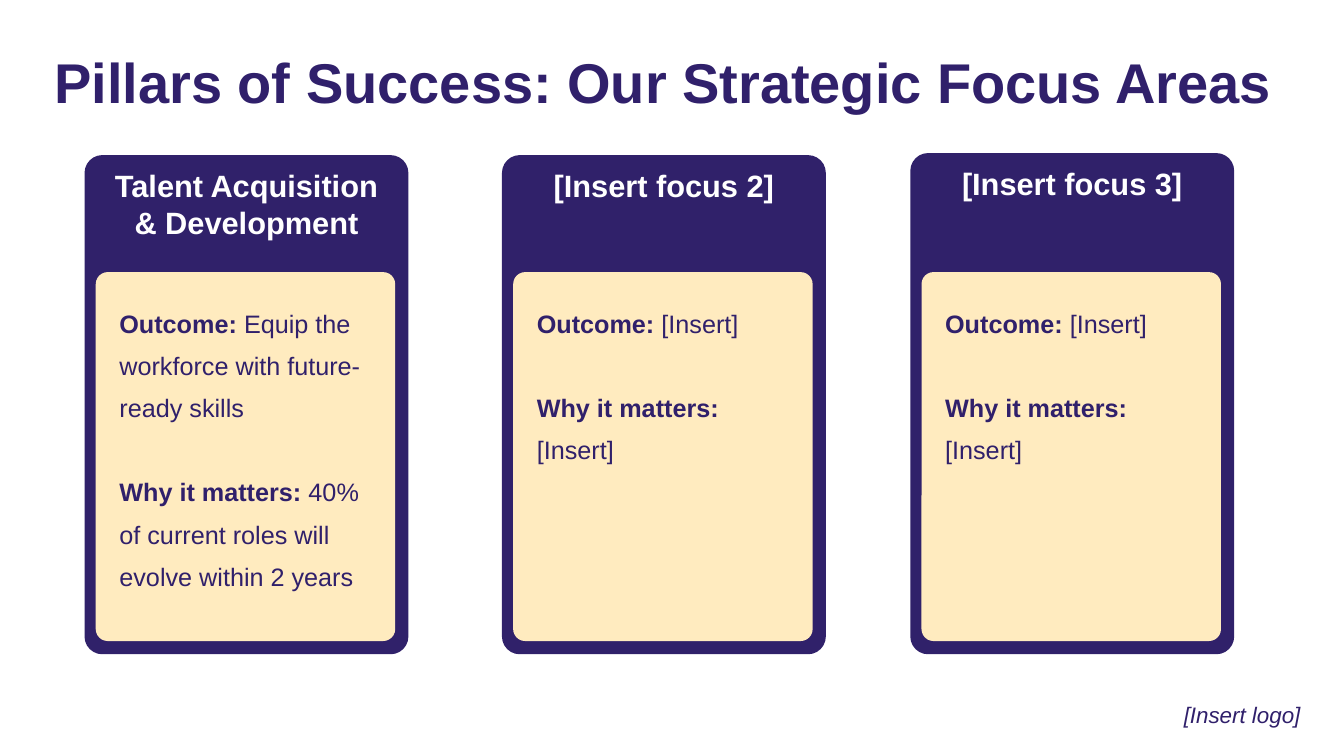
import pptx
import pptx.util
import pptx.dml.color
import pptx.enum.shapes
import pptx.enum.text

Inches = pptx.util.Inches
Pt = pptx.util.Pt
RGBColor = pptx.dml.color.RGBColor
PP_ALIGN = pptx.enum.text.PP_ALIGN
MSO_ANCHOR = pptx.enum.text.MSO_ANCHOR

INK = RGBColor(0x30, 0x20, 0x6B)
PILLAR = RGBColor(0x30, 0x21, 0x6A)
CREAM = RGBColor(0xFF, 0xEB, 0xBF)
WHITE = RGBColor(0xFF, 0xFF, 0xFF)

# Left, top, focus area, outcome, why it matters
PILLARS = [
    (0.86, 1.56, "Talent Acquisition & Development",
     "Equip the workforce with future-ready skills",
     "40% of current roles will evolve within 2 years"),
    (5, 1.56, "[Insert focus 2]", "[Insert]", "[Insert]"),
    (9.05, 1.54, "[Insert focus 3]", "[Insert]", "[Insert]"),
]
PILLAR_WIDTH = 3.17
PILLAR_BOTTOM = 6.47
PANEL_INDENT = 0.09


def style_font(paragraph, size, color, bold=None, italic=None):
    font = paragraph.font
    font.name = "Arial"
    font.size = Pt(size)
    font.color.rgb = color
    font.bold = bold
    font.italic = italic


def set_frame(frame, anchor, left, top, right, bottom):
    """Wrap the text and set its anchor and its insets in inches."""
    frame.word_wrap = True
    frame.vertical_anchor = anchor
    frame.margin_left = Inches(left)
    frame.margin_top = Inches(top)
    frame.margin_right = Inches(right)
    frame.margin_bottom = Inches(bottom)


def add_label(slide, box, text, size, anchor, insets=(0, 0, 0, 0),
              align=PP_ALIGN.LEFT, bold=None, italic=None):
    label = slide.shapes.add_textbox(*map(Inches, box))
    set_frame(label.text_frame, anchor, *insets)
    paragraph = label.text_frame.paragraphs[0]
    paragraph.text = text
    paragraph.alignment = align
    paragraph.line_spacing = 0.9
    style_font(paragraph, size, INK, bold, italic)


def add_rounded(slide, box, rounding, color):
    rounded = slide.shapes.add_shape(
        pptx.enum.shapes.MSO_SHAPE.ROUNDED_RECTANGLE, *map(Inches, box))
    rounded.adjustments[0] = rounding
    rounded.shadow.inherit = False
    rounded.fill.solid()
    rounded.fill.fore_color.rgb = color
    return rounded


def add_header_card(slide, left, top, focus):
    card = add_rounded(
        slide, (left, top, PILLAR_WIDTH, PILLAR_BOTTOM - top), 0.049, PILLAR)
    card.line.color.rgb = PILLAR
    card.line.width = Pt(3)
    set_frame(card.text_frame, MSO_ANCHOR.TOP, 0.1, 0.05, 0.1, 0.05)
    heading = card.text_frame.paragraphs[0]
    heading.text = focus
    heading.alignment = PP_ALIGN.CENTER
    style_font(heading, 22, WHITE, bold=True)


def add_detail_panel(slide, left, outcome, reason):
    panel = add_rounded(slide, (left, 2.7, 2.97, 3.66), 0.04, CREAM)
    panel.line.fill.background()
    frame = panel.text_frame
    set_frame(frame, MSO_ANCHOR.TOP, 0.2, 0.2, 0.2, 0.2)
    details = [(frame.paragraphs[0], "Outcome: ", outcome, 0),
               (frame.add_paragraph(), "Why it matters: ", reason, 30)]
    for paragraph, term, detail, gap in details:
        paragraph.alignment = PP_ALIGN.LEFT
        paragraph.line_spacing = 1.4
        paragraph.space_before = Pt(gap)
        style_font(paragraph, 18, INK)
        term_run = paragraph.add_run()
        term_run.text = term
        term_run.font.bold = True
        paragraph.add_run().text = detail


def main():
    deck = pptx.Presentation()
    deck.slide_width = Inches(13.33)
    deck.slide_height = Inches(7.5)
    slide = deck.slides.add_slide(deck.slide_layouts[6])

    add_label(slide, (0.54, 0.52, 12.27, 0.66),
              "Pillars of Success: Our Strategic Focus Areas", 40,
              MSO_ANCHOR.MIDDLE, bold=True)
    for left, top, focus, outcome, reason in PILLARS:
        add_header_card(slide, left, top, focus)
        add_detail_panel(slide, left + PANEL_INDENT, outcome, reason)
    add_label(slide, (11.63, 6.72, 1.54, 0.44), "[Insert logo]", 16,
              MSO_ANCHOR.TOP, insets=(0, 0.3, 0.16, 0),
              align=PP_ALIGN.CENTER, italic=True)

    deck.save("out.pptx")


if __name__ == "__main__":
    main()
